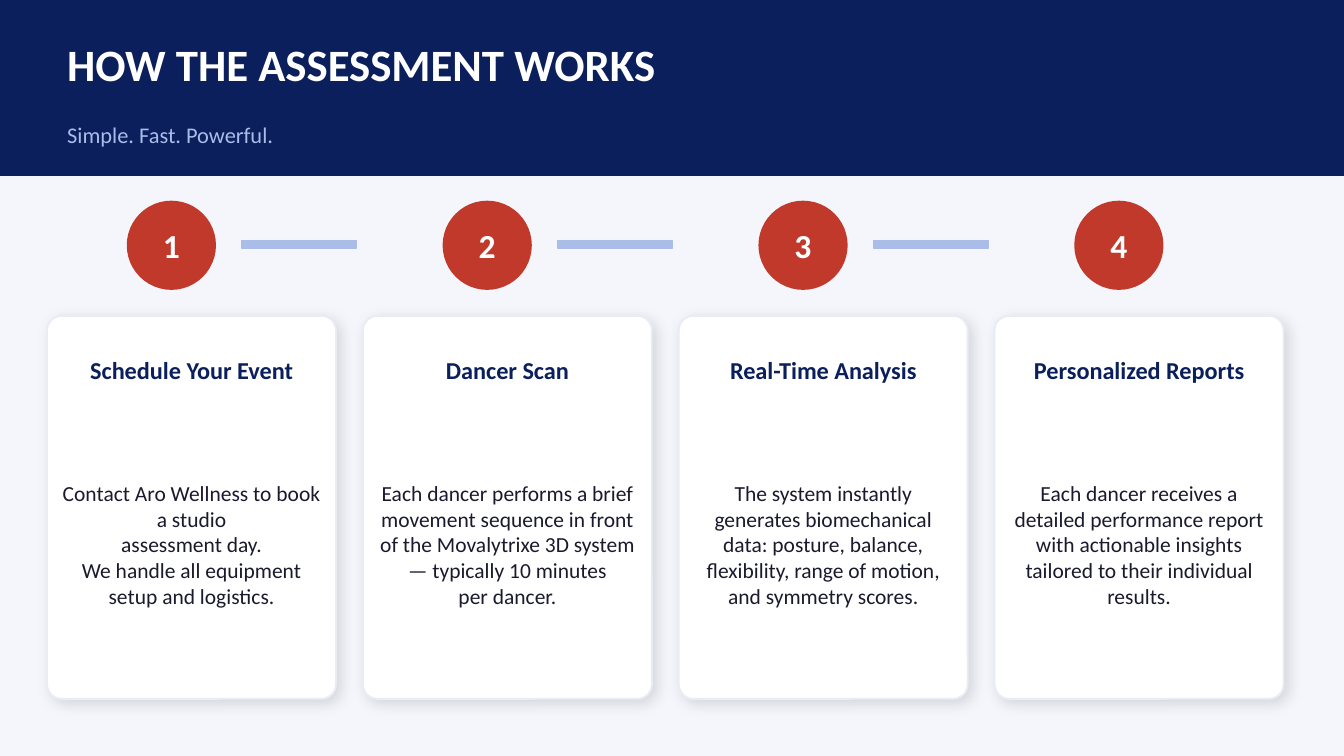
"""Build the four-step assessment process slide."""
from dataclasses import dataclass
from typing import Any

import lxml.etree
import pptx
import pptx.dml.color
import pptx.enum.shapes
import pptx.enum.text
import pptx.oxml
import pptx.oxml.ns
import pptx.util

Pt = pptx.util.Pt
SHAPE = pptx.enum.shapes.MSO_SHAPE
ALIGN = pptx.enum.text.PP_ALIGN


@dataclass(frozen=True)
class Theme:
    """Hold the colours, font and type sizes."""
    font: str = "Calibri"
    background: str = "F4F6FB"
    navy: str = "0A1F5C"
    red: str = "C0392B"
    pale_blue: str = "AABCE8"
    white: str = "FFFFFF"
    border: str = "E8ECF4"
    ink: str = "1A1A2E"
    title: float = 24
    subtitle: float = 12
    number: float = 18
    heading: float = 13
    body: float = 11.5


@dataclass(frozen=True)
class Box:
    """Hold a position and size in points."""
    left: float
    top: float
    width: float
    height: float

    def shifted(self, dx: float) -> "Box":
        """Return the box moved sideways."""
        return Box(self.left + dx, self.top, self.width, self.height)

    def lengths(self) -> tuple[int, int, int, int]:
        """Return the four lengths for python-pptx."""
        return Pt(self.left), Pt(self.top), Pt(self.width), Pt(self.height)


@dataclass(frozen=True)
class Step:
    """Hold the wording of one step."""
    heading: str
    body: str


THEME = Theme()
PITCH = 169.2
BAND = Box(0, 0, 720, 93.6)
TITLE = Box(36, 10.8, 648, 46.8)
SUBTITLE = Box(36, 59.04, 648, 25.92)
CIRCLE = Box(68.4, 108, 46.8, 46.8)
BAR = Box(129.6, 128.88, 61.2, 4.32)
CARD = Box(25.2, 169.2, 154.8, 205.2)
HEADING = Box(32.4, 180, 140.4, 36)
BODY = Box(32.4, 223.2, 140.4, 136.8)

STEPS = [
    Step("Schedule Your Event",
         "Contact Aro Wellness to book a studio\nassessment day.\n"
         "We handle all equipment setup and logistics."),
    Step("Dancer Scan",
         "Each dancer performs a brief movement sequence in front of the "
         "Movalytrixe 3D system — typically 10 minutes\nper dancer."),
    Step("Real-Time Analysis",
         "The system instantly generates biomechanical data: posture, balance, "
         "flexibility, range of motion, and symmetry scores."),
    Step("Personalized Reports",
         "Each dancer receives a detailed performance report with actionable "
         "insights tailored to their individual results."),
]


def rgb(color: str) -> pptx.dml.color.RGBColor:
    """Return a colour from its hex code."""
    return pptx.dml.color.RGBColor.from_string(color)


def write(shape: Any, text: str, size: float, color: str, bold: bool = False,
          align: Any = ALIGN.CENTER) -> None:
    """Set and format the text of a shape."""
    tf = shape.text_frame
    tf.text = text
    tf.word_wrap = True
    tf.auto_size = pptx.enum.text.MSO_AUTO_SIZE.NONE
    tf.vertical_anchor = pptx.enum.text.MSO_ANCHOR.MIDDLE
    tf.margin_left = tf.margin_top = tf.margin_right = tf.margin_bottom = 0
    for p in tf.paragraphs:
        p.alignment = align
        p.space_before = Pt(0)
        for r in p.runs:
            r.font.name = THEME.font
            r.font.size = Pt(size)
            r.font.bold = bold
            r.font.color.rgb = rgb(color)


def add_box(s: Any, kind: Any, box: Box, fill: str, line: str) -> Any:
    """Add a filled and outlined preset shape."""
    sp = s.shapes.add_shape(kind, *box.lengths())
    sp.fill.solid()
    sp.fill.fore_color.rgb = rgb(fill)
    sp.line.color.rgb = rgb(line)
    sp.line.width = Pt(1)
    sp.shadow.inherit = False
    return sp


def add_text(s: Any, box: Box, text: str, size: float, color: str,
             bold: bool = False) -> None:
    """Add a centred text box."""
    write(s.shapes.add_textbox(*box.lengths()), text, size, color, bold)


def fill_placeholder(sp: Any, box: Box, text: str, size: float, color: str,
                     bold: bool = False) -> None:
    """Place a placeholder and set its text."""
    sp.left, sp.top, sp.width, sp.height = box.lengths()
    write(sp, text, size, color, bold, ALIGN.LEFT)


def add_soft_shadow(sp: Any) -> None:
    """Give a shape a faint shadow to the lower right."""
    qn = pptx.oxml.ns.qn
    effects = sp.element.spPr.find(qn("a:effectLst"))
    shadow = lxml.etree.SubElement(
        effects, qn("a:outerShdw"), blurRad=str(Pt(8)), dist=str(Pt(3)),
        dir="2700000", algn="bl", rotWithShape="0")
    color = lxml.etree.SubElement(shadow, qn("a:srgbClr"), val="000000")
    lxml.etree.SubElement(color, qn("a:alpha"), val="12000")


def add_step(s: Any, index: int, step: Step) -> None:
    """Draw one numbered step with its card."""
    dx = index * PITCH
    circle = add_box(s, SHAPE.OVAL, CIRCLE.shifted(dx), THEME.red, THEME.red)
    write(circle, str(index + 1), THEME.number, THEME.white, True)
    if index < len(STEPS) - 1:
        add_box(s, SHAPE.RECTANGLE, BAR.shifted(dx), THEME.pale_blue, THEME.pale_blue)
    card = add_box(s, SHAPE.ROUNDED_RECTANGLE, CARD.shifted(dx), THEME.white, THEME.border)
    card.adjustments[0] = 0.05
    add_soft_shadow(card)
    add_text(s, HEADING.shifted(dx), step.heading, THEME.heading, THEME.navy, True)
    add_text(s, BODY.shifted(dx), step.body, THEME.body, THEME.ink)


def main() -> None:
    """Build and save the slide."""
    prs = pptx.Presentation()
    prs.slide_width, prs.slide_height = Pt(720), Pt(405)
    s = prs.slides.add_slide(prs.slide_layouts[0])
    s.background.fill.solid()
    s.background.fill.fore_color.rgb = rgb(THEME.background)
    title, subtitle = s.placeholders
    band = add_box(s, SHAPE.RECTANGLE, BAND, THEME.navy, THEME.navy)
    title.element.addprevious(band.element)
    fill_placeholder(title, TITLE, "HOW THE ASSESSMENT WORKS",
                     THEME.title, THEME.white, True)
    fill_placeholder(subtitle, SUBTITLE, "Simple. Fast. Powerful.",
                     THEME.subtitle, THEME.pale_blue)
    for index, step in enumerate(STEPS):
        add_step(s, index, step)
    prs.save("out.pptx")


if __name__ == "__main__":
    main()
